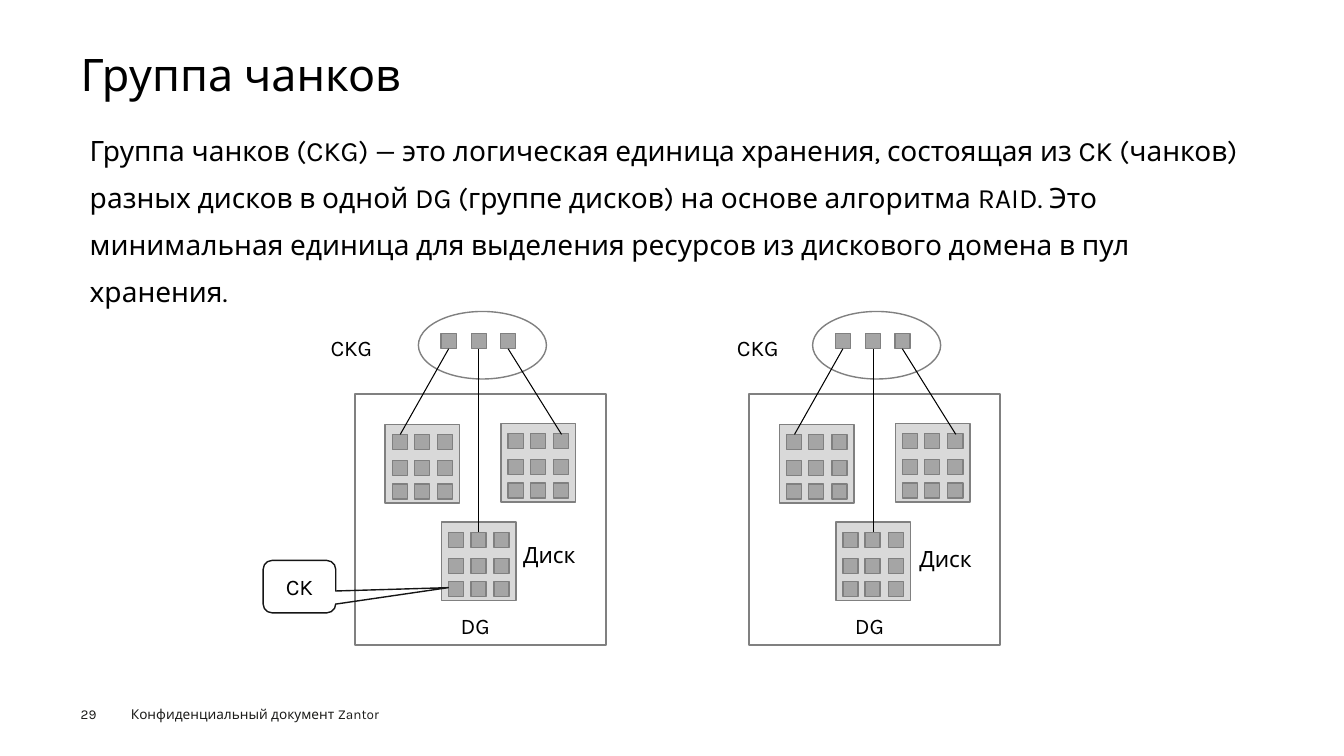
from pptx import Presentation
from pptx.dml.color import RGBColor
from pptx.enum.shapes import MSO_CONNECTOR, MSO_SHAPE
from pptx.enum.text import MSO_ANCHOR, MSO_AUTO_SIZE, PP_ALIGN
from pptx.oxml.ns import qn
from pptx.util import Inches, Pt

RECT, OVAL = MSO_SHAPE.RECTANGLE, MSO_SHAPE.OVAL
CALLOUT = MSO_SHAPE.ROUNDED_RECTANGULAR_CALLOUT
STRAIGHT = MSO_CONNECTOR.STRAIGHT
TOP, MIDDLE = MSO_ANCHOR.TOP, MSO_ANCHOR.MIDDLE
LEFT, CENTER = PP_ALIGN.LEFT, PP_ALIGN.CENTER
NO_FIT = MSO_AUTO_SIZE.NONE

FONT = "Karla"
COLORS = {"text": "000000", "foot": "1D1D1B", "edge": "808080",
          "disk": "D9D9D9", "chunk": "A5A5A5", "call": "151515"}
CHUNK = 0.15
COLS = (0.07, 0.29, 0.52)
ROWS = (0.1, 0.36, 0.59)
DISKS = ((0.86, 2.09), (0.3, 1.12), (1.45, 1.11))
LINKS = ((0.93, 0.45), (1.23, 1.23), (1.52, 2.05))
BODY = ("Группа чанков (CKG) — это логическая единица хранения, состоящая "
        "из CK (чанков) разных дисков в одной DG (группе дисков) на основе "
        "алгоритма RAID. Это минимальная единица для выделения ресурсов из "
        "дискового домена в пул хранения.")


def color(name):
    """Return a palette colour."""
    return RGBColor.from_string(COLORS[name])


def write(shape, text, size, tone="text", align=LEFT, anchor=TOP,
          inset=(0.1, 0.05), lead=None):
    """Put one formatted paragraph in a shape."""
    frame = shape.text_frame
    across, down = map(Inches, inset)
    form = {"word_wrap": True, "auto_size": NO_FIT, "vertical_anchor": anchor,
            "margin_left": across, "margin_right": across,
            "margin_top": down, "margin_bottom": down}
    for key, value in form.items():
        setattr(frame, key, value)
    frame.text = text
    para = frame.paragraphs[0]
    para.alignment = align
    if lead:
        para.line_spacing = lead
    font = para.runs[0].font
    for key, value in {"name": FONT, "size": Pt(size)}.items():
        setattr(font, key, value)
    font.color.rgb = color(tone)


def label(shapes, box, text, size=16, **form):
    """Add a text box."""
    write(shapes.add_textbox(*map(Inches, box)), text, size, **form)


def draw(shapes, kind, box, fill=None, edge="edge"):
    """Add an outlined preset shape."""
    shape = shapes.add_shape(kind, *map(Inches, box))
    shape.shadow.inherit = False
    if fill:
        shape.fill.solid()
        shape.fill.fore_color.rgb = color(fill)
    else:
        shape.fill.background()
    shape.line.color.rgb = color(edge)
    shape.line.width = Pt(1)
    return shape


def link(shapes, start, end):
    """Join two points with a thin line."""
    line = shapes.add_connector(STRAIGHT, *map(Inches, start + end))
    line.line.color.rgb = color("text")
    line.line.width = Pt(0.75)
    props = line._element.spPr
    props.append(props.makeelement(qn("a:effectLst"), {}))


def disk(shapes, left, top):
    """Draw a disk with its grid of chunks."""
    draw(shapes, RECT, (left, top, 0.74, 0.78), "disk")
    for row in ROWS:
        for col in COLS:
            draw(shapes, RECT, (left + col, top + row, CHUNK, CHUNK), "chunk")


def domain(slide, left, top, tag, name):
    """Draw a disk group below its chunk group."""
    shapes = slide.shapes.add_group_shape().shapes
    draw(shapes, RECT, (left, top + 0.82, 2.49, 2.49))
    label(shapes, (left + 0.95, top + 2.93, 0.73, 0.37), "DG")
    for x, y in DISKS:
        disk(shapes, left + x, top + 0.0 + y)
    draw(shapes, OVAL, (left + 0.63, top, 1.27, 0.67))
    label(shapes, (left + tag, top + 0.18, 0.87, 0.37), "CKG")
    for x, end in LINKS:
        draw(shapes, RECT, (left + x - CHUNK / 2, top + 0.22, CHUNK, CHUNK),
             "chunk")
        drop = 2.19 if x == end else 1.22
        link(shapes, (left + x, top + 0.37), (left + end, top + drop))
    label(slide.shapes, (left + name[0], top + name[1], 0.87, 0.4), "Диск")


def head(slide, left, top, width):
    """Place the title and the definition."""
    title = slide.shapes.title
    box = {"left": left, "top": top, "width": width, "height": 0.54}
    for key, value in box.items():
        setattr(title, key, Inches(value))
    write(title, "Группа чанков", 32, anchor=MIDDLE, inset=(0, 0), lead=0.9)
    label(slide.shapes, (left, top + 0.66, width, 5.33), BODY, 20,
          inset=(0.09, 0.04), lead=1.4)


def note(slide, left, top):
    """Point the callout at a chunk."""
    shape = draw(slide.shapes, CALLOUT, (left, top, 0.72, 0.52), edge="call")
    for i, value in enumerate((2.05, 0.02, 0.17)):
        shape.adjustments[i] = value
    write(shape, "CK", 16, align=CENTER, anchor=MIDDLE)


def foot(slide, left, top):
    """Add the page number and the footer."""
    label(slide.shapes, (left, top + 0.05, 0.55, 0.16), "29", 9.7,
          tone="foot", inset=(0, 0))
    label(slide.shapes, (left + 0.4, top, 2.86, 0.26),
          "Конфиденциальный документ Zantor", 9.7, tone="foot")


def main():
    """Build and save the slide."""
    deck = Presentation()
    deck.slide_width, deck.slide_height = Inches(13.33), Inches(7.5)
    slide = deck.slides.add_slide(deck.slide_layouts[5])
    head(slide, 0.8, 0.49, 11.73)
    domain(slide, 3.52, 3.09, -0.34, (1.57, 2.23))
    domain(slide, 7.43, 3.09, -0.22, (1.59, 2.27))
    note(slide, 2.61, 5.56)
    foot(slide, 0.8, 6.95)
    deck.save("out.pptx")


if __name__ == "__main__":
    main()
